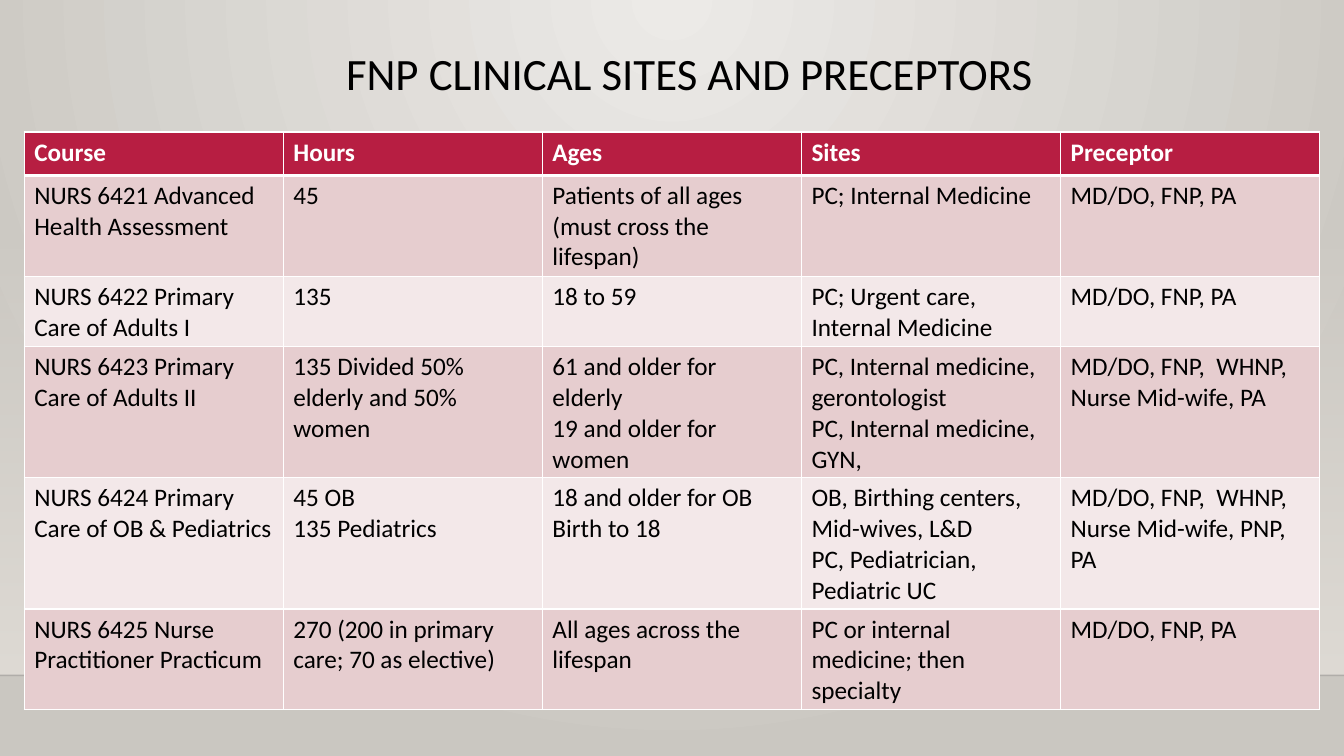
"""Build a slide with a table of FNP clinical sites and preceptors."""
from lxml import etree
from pptx import Presentation
from pptx.dml.color import RGBColor
from pptx.enum.shapes import MSO_CONNECTOR, MSO_SHAPE
from pptx.enum.text import MSO_ANCHOR, PP_ALIGN
from pptx.oxml.ns import qn
from pptx.util import Inches, Pt

RECTANGLE = MSO_SHAPE.RECTANGLE
STRAIGHT = MSO_CONNECTOR.STRAIGHT
TOP = MSO_ANCHOR.TOP
CENTER = PP_ALIGN.CENTER

BLACK = RGBColor(0x00, 0x00, 0x00)
NEAR_BLACK = RGBColor(0x00, 0x00, 0x01)
WHITE = RGBColor(0xFF, 0xFF, 0xFF)
CRIMSON = RGBColor(0xB7, 0x1E, 0x42)
ROSE = RGBColor(0xE6, 0xCD, 0xCF)
PALE_ROSE = RGBColor(0xF3, 0xE8, 0xE9)
LIGHT_STONE = RGBColor(0xEC, 0xEA, 0xE7)
DARK_STONE = RGBColor(0xCA, 0xC7, 0xC1)
FLOOR_STONE = RGBColor(0xDF, 0xDB, 0xD5)

SLIDE_WIDTH = 13.33
FLOOR_LINE = 6.7
COLUMN_WIDTH = 2.57
ROW_HEIGHTS = [0.43, 1.0, 0.7, 1.3, 1.3, 1.0]

TITLE_FONT = {"name": "Calibri", "size": Pt(32)}
HEADER_FONT = {"name": "Calibri", "size": Pt(18), "bold": True}
BODY_FONT = {"name": "Calibri", "size": Pt(18), "bold": False}

COURSES = [
    ["Course", "Hours", "Ages", "Sites", "Preceptor"],
    ["NURS 6421 Advanced Health Assessment", "45",
     "Patients of all ages (must cross the lifespan)",
     "PC; Internal Medicine", "MD/DO, FNP, PA"],
    ["NURS 6422 Primary Care of Adults I", "135", "18 to 59",
     "PC; Urgent care, Internal Medicine", "MD/DO, FNP, PA"],
    ["NURS 6423 Primary Care of Adults II",
     "135 Divided 50% elderly and 50% women",
     "61 and older for elderly\n19 and older for women",
     "PC, Internal medicine, gerontologist\nPC, Internal medicine, GYN,",
     "MD/DO, FNP,  WHNP, Nurse Mid-wife, PA"],
    ["NURS 6424 Primary Care of OB & Pediatrics", "45 OB\n135 Pediatrics",
     "18 and older for OB\nBirth to 18",
     "OB, Birthing centers, Mid-wives, L&D\nPC, Pediatrician, Pediatric UC",
     "MD/DO, FNP,  WHNP, Nurse Mid-wife, PNP, PA"],
    ["NURS 6425 Nurse Practitioner Practicum",
     "270 (200 in primary care; 70 as elective)",
     "All ages across the lifespan",
     "PC or internal medicine; then specialty", "MD/DO, FNP, PA"],
]


def format_text(frame, values, color):
    """Apply font values and a colour to every paragraph of a frame."""
    for para in frame.paragraphs:
        for span in para.runs:
            for name, value in values.items():
                setattr(span.font, name, value)
            span.font.color.rgb = color


def set_alpha(color_element, percent):
    """Give a colour element an opacity in percent."""
    etree.SubElement(color_element, qn("a:alpha"), val=str(percent * 1000))


def set_gradient(fill, colors):
    """Make a fill a two-colour gradient."""
    fill.gradient()
    for stop, color in zip(fill.gradient_stops, colors):
        stop.color.rgb = color


def paint_background(page):
    """Fill the page with a glow that spreads from the top centre."""
    set_gradient(page.background.fill, [LIGHT_STONE, DARK_STONE])
    gradient = next(page.element.iter(qn("a:gradFill")))
    gradient.remove(gradient.find(qn("a:lin")))
    glow = etree.SubElement(gradient, qn("a:path"), attrib={"path": "circle"})
    etree.SubElement(glow, qn("a:fillToRect"),
                     l="43000", t="0", r="43000", b="100000")


def add_wall(page):
    """Add the band that fades in from clear down to the floor line."""
    wall = page.shapes.add_shape(RECTANGLE, 0, Inches(2.21),
                                 Inches(SLIDE_WIDTH), Inches(4.49))
    wall.shadow.inherit = False
    wall.line.fill.background()
    set_gradient(wall.fill, [FLOOR_STONE, FLOOR_STONE])
    wall.fill.gradient_angle = 270
    set_alpha(next(wall.element.spPr.iter(qn("a:srgbClr"))), 0)


def add_floor_line(page):
    """Add the faint line across the bottom of the page."""
    line = page.shapes.add_connector(STRAIGHT, 0, Inches(FLOOR_LINE),
                                     Inches(SLIDE_WIDTH), Inches(FLOOR_LINE))
    line.line.color.rgb = NEAR_BLACK
    line.line.width = Pt(1)
    properties = line.element.spPr
    set_alpha(next(properties.iter(qn("a:srgbClr"))), 20)
    etree.SubElement(properties, qn("a:effectLst"))


def add_title(page, text):
    """Add the centred title."""
    box = page.shapes.add_textbox(Inches(1.59), Inches(0.46),
                                  Inches(10.5), Inches(1.15))
    frame = box.text_frame
    frame.word_wrap = True
    frame.vertical_anchor = TOP
    frame.text = text
    para = frame.paragraphs[0]
    para.alignment = CENTER
    para.line_spacing = 0.9
    format_text(frame, TITLE_FONT, BLACK)


def set_borders(cell, top, bottom):
    """Draw white cell borders, with top and bottom widths in points."""
    properties = cell._tc.get_or_add_tcPr()
    widths = {"a:lnL": 1, "a:lnR": 1, "a:lnT": top, "a:lnB": bottom}
    for index, (tag, width) in enumerate(widths.items()):
        border = etree.Element(qn(tag), w=str(Pt(width)))
        solid = etree.SubElement(border, qn("a:solidFill"))
        etree.SubElement(solid, qn("a:srgbClr"), val=str(WHITE))
        properties.insert(index, border)


def add_course_table(page):
    """Add the course table with a crimson header and banded rows."""
    columns = len(COURSES[0])
    table = page.shapes.add_table(
        len(COURSES), columns, Inches(0.24), Inches(1.31),
        Inches(COLUMN_WIDTH * columns), Inches(sum(ROW_HEIGHTS))).table
    for column in table.columns:
        column.width = Inches(COLUMN_WIDTH)
    for index, (texts, height) in enumerate(zip(COURSES, ROW_HEIGHTS)):
        table.rows[index].height = Inches(height)
        header = index == 0
        band = CRIMSON if header else ROSE if index % 2 else PALE_ROSE
        for cell, text in zip(table.rows[index].cells, texts):
            cell.text = text
            cell.fill.solid()
            cell.fill.fore_color.rgb = band
            set_borders(cell, 3 if index == 1 else 1, 3 if header else 1)
            format_text(cell.text_frame, HEADER_FONT if header else BODY_FONT,
                        WHITE if header else BLACK)


def main():
    """Build and save the deck."""
    deck = Presentation()
    deck.slide_width = Inches(SLIDE_WIDTH)
    deck.slide_height = Inches(7.5)
    page = deck.slides.add_slide(deck.slide_layouts[6])
    paint_background(page)
    add_wall(page)
    add_floor_line(page)
    add_title(page, "FNP CLINICAL SITES AND PRECEPTORS")
    add_course_table(page)
    deck.save("out.pptx")


if __name__ == "__main__":
    main()
